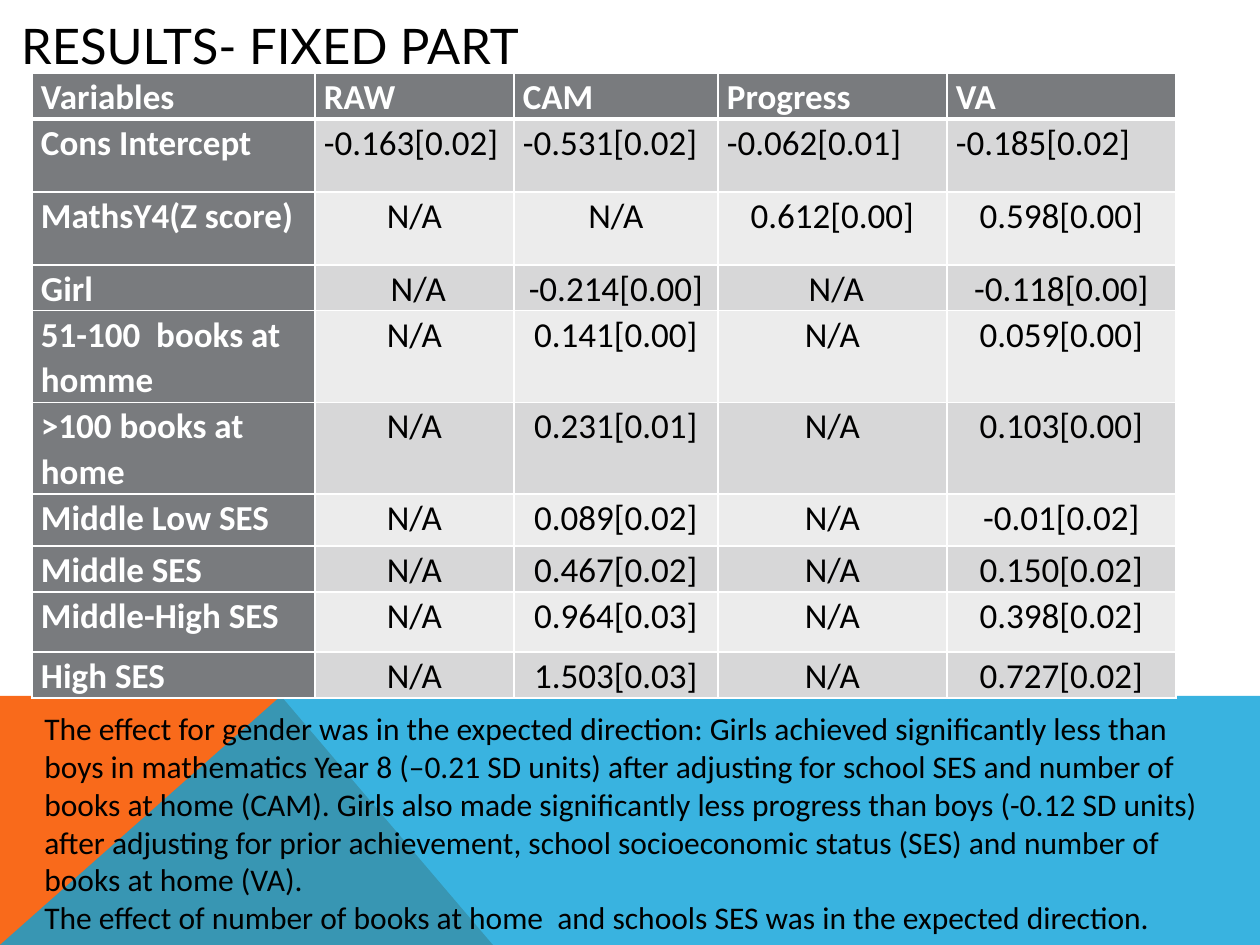
from lxml.etree import SubElement
from pptx import Presentation
from pptx.dml.color import RGBColor
from pptx.enum.text import MSO_ANCHOR, PP_ALIGN
from pptx.oxml.ns import qn
from pptx.util import Pt

SCALE = 914400 / 126
TITLE = " RESULTS- FIXED PART"
HEADER = ["Variables", "RAW", "CAM", "Progress", "VA"]
RESULTS = [
    ["Cons Intercept", "-0.163[0.02]", "-0.531[0.02]", "-0.062[0.01]", "-0.185[0.02]"],
    ["MathsY4(Z score)", "N/A", "N/A", "0.612[0.00]", "0.598[0.00]"],
    ["Girl", " N/A", "-0.214[0.00]", " N/A", "-0.118[0.00]"],
    ["51-100  books at homme", "N/A", "0.141[0.00]", "N/A", "0.059[0.00]"],
    [">100 books at home", "N/A", "0.231[0.01]", "N/A", "0.103[0.00]"],
    ["Middle Low SES", "N/A", "0.089[0.02]", "N/A", "-0.01[0.02]"],
    ["Middle SES", "N/A", "0.467[0.02]", "N/A", "0.150[0.02]"],
    ["Middle-High SES", "N/A", "0.964[0.03]", "N/A", "0.398[0.02]"],
    ["High SES", "N/A", "1.503[0.03]", "N/A", "0.727[0.02]"],
]
COLUMN_WIDTHS = [283, 199, 204, 229, 229]
ROW_HEIGHTS = [35, 73, 73, 43, 89, 73, 52, 35, 60, 35]
COMMENTS = [
    "The effect for gender was in the expected direction: Girls achieved significantly "
    "less than boys in mathematics Year 8 (–0.21 SD units) after adjusting for school SES "
    "and number of books at home (CAM). Girls also made significantly less progress than "
    "boys (-0.12 SD units) after adjusting for prior achievement, school socioeconomic "
    "status (SES) and number of books at home (VA).",
    "The effect of number of books at home  and schools SES was in the expected direction.",
]
BANDS = [
    ([(0, 945), (0, 696), (281, 696), (493, 945)], "F96A1B", 100),
    ([(0, 945), (281, 696), (1260, 696), (1260, 945)], "08A1D9", 80),
]
HEAD_FILL, ROW_FILLS = "797B7E", ["D7D7D8", "ECECEC"]


def px(length):
    """Turn pixels into EMU."""
    return round(length * SCALE)


def color(value):
    """Turn a hex string into a colour."""
    return RGBColor.from_string(value)


def format_text(para, font, size, ink, bold=False):
    """Format every run of a paragraph."""
    for span in para.runs:
        span.font.name = font
        span.font.size = Pt(size)
        span.font.bold = bold
        span.font.color.rgb = color(ink)


def add_band(page, points, fill, opacity):
    """Draw one band of the footer."""
    builder = page.shapes.build_freeform(*points[0], scale=SCALE)
    builder.add_line_segments(points[1:], close=True)
    band = builder.convert_to_shape()
    band.shadow.inherit = False
    band.line.fill.background()
    band.fill.solid()
    band.fill.fore_color.rgb = color(fill)
    if opacity < 100:
        tint = band.fill._xPr.find(".//" + qn("a:srgbClr"))
        SubElement(tint, qn("a:alpha"), val=str(opacity * 1000))


def add_border(cell, side, width):
    """Give one side of a cell a white line."""
    line = SubElement(cell._tc.get_or_add_tcPr(), qn("a:ln" + side), w=str(Pt(width)))
    SubElement(SubElement(line, qn("a:solidFill")), qn("a:srgbClr"), val="FFFFFF")


def format_cell(cell, text, row, column):
    """Fill one table cell by its place in the grid."""
    is_head = row == 0 or column == 0
    cell.text = text
    cell.margin_left = cell.margin_right = px(9)
    cell.margin_top = cell.margin_bottom = 0
    for side in "LRTB":
        thick = (row, side) in [(0, "B"), (1, "T")]
        add_border(cell, side, 3 if thick else 1)
    cell.fill.solid()
    cell.fill.fore_color.rgb = color(HEAD_FILL if is_head else ROW_FILLS[(row - 1) % 2])
    para = cell.text_frame.paragraphs[0]
    para.line_spacing = 1.07
    para.alignment = PP_ALIGN.CENTER if row > 1 and column > 0 else PP_ALIGN.LEFT
    format_text(para, "Calibri", 20, "FFFFFF" if is_head else "000000", is_head)


def add_results(page):
    """Add the table of coefficients."""
    rows = [HEADER] + RESULTS
    frame = page.shapes.add_table(
        len(rows), len(HEADER), px(32), px(73), px(sum(COLUMN_WIDTHS)), px(sum(ROW_HEIGHTS)))
    table = frame.table
    for column, width in zip(table.columns, COLUMN_WIDTHS):
        column.width = px(width)
    for row, height in zip(table.rows, ROW_HEIGHTS):
        row.height = px(height)
    for row, texts in enumerate(rows):
        for column, text in enumerate(texts):
            format_cell(table.cell(row, column), text, row, column)


def place_title(page):
    """Move, fill and format the title above the bands."""
    title = page.shapes.title
    page.shapes._spTree.append(title._element)
    title.left, title.top, title.width, title.height = px(-4), px(-15), px(1050), px(120)
    title.text_frame.text = TITLE
    title.text_frame.vertical_anchor = MSO_ANCHOR.MIDDLE
    para = title.text_frame.paragraphs[0]
    para.alignment = PP_ALIGN.LEFT
    format_text(para, "Lato", 28, "000000")


def add_comments(page):
    """Add the comments below the table."""
    box = page.shapes.add_textbox(px(32), px(703), px(1197), px(242))
    box.text_frame.word_wrap = True
    box.text_frame.text = "\n".join(COMMENTS)
    for para in box.text_frame.paragraphs:
        format_text(para, "Calibri", 18, "000000")


def main():
    """Build the slide and save it."""
    deck = Presentation()
    deck.slide_width, deck.slide_height = px(1260), px(945)
    page = deck.slides.add_slide(deck.slide_layouts[5])
    for band in BANDS:
        add_band(page, *band)
    place_title(page)
    add_results(page)
    add_comments(page)
    deck.save("out.pptx")


if __name__ == "__main__":
    main()
